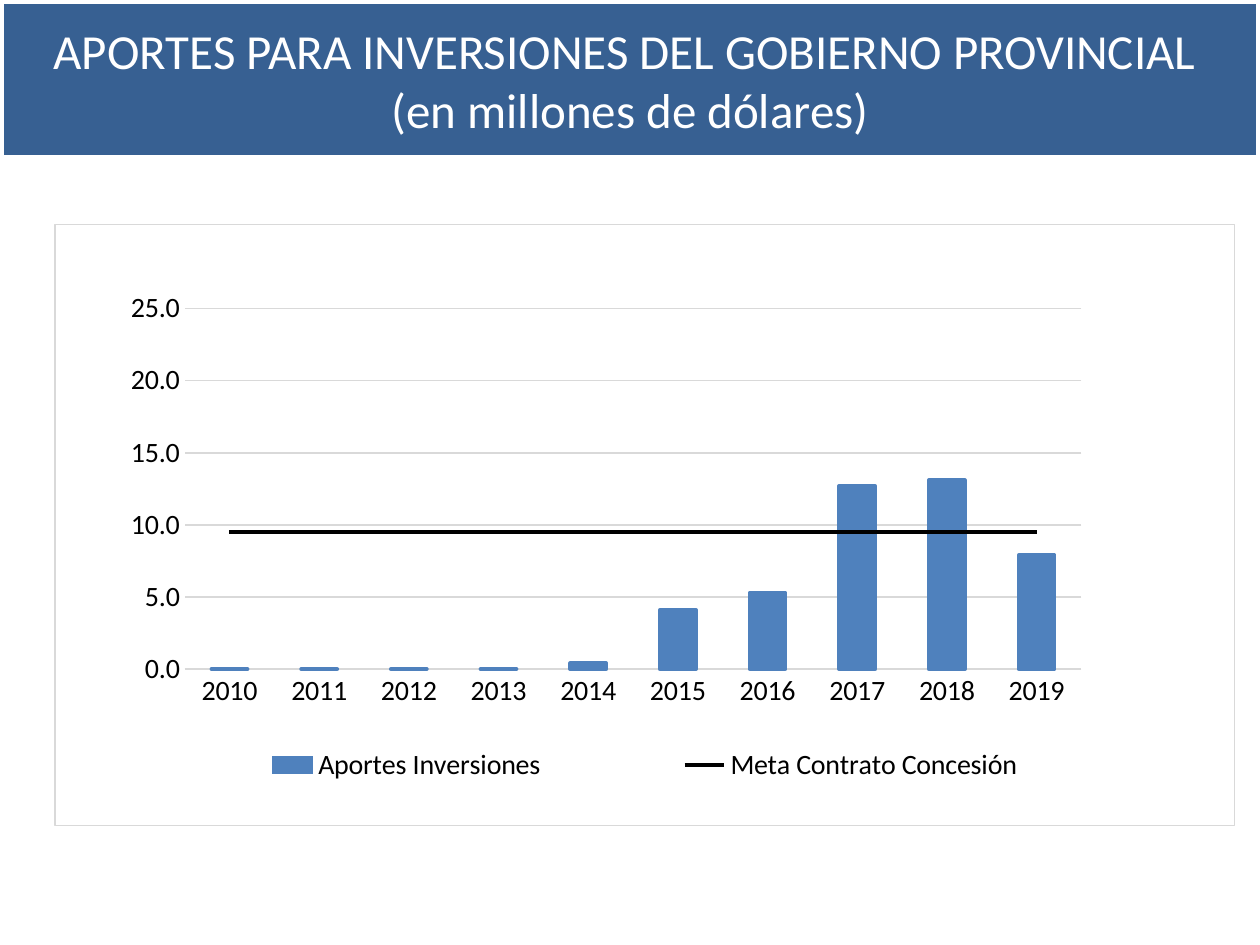
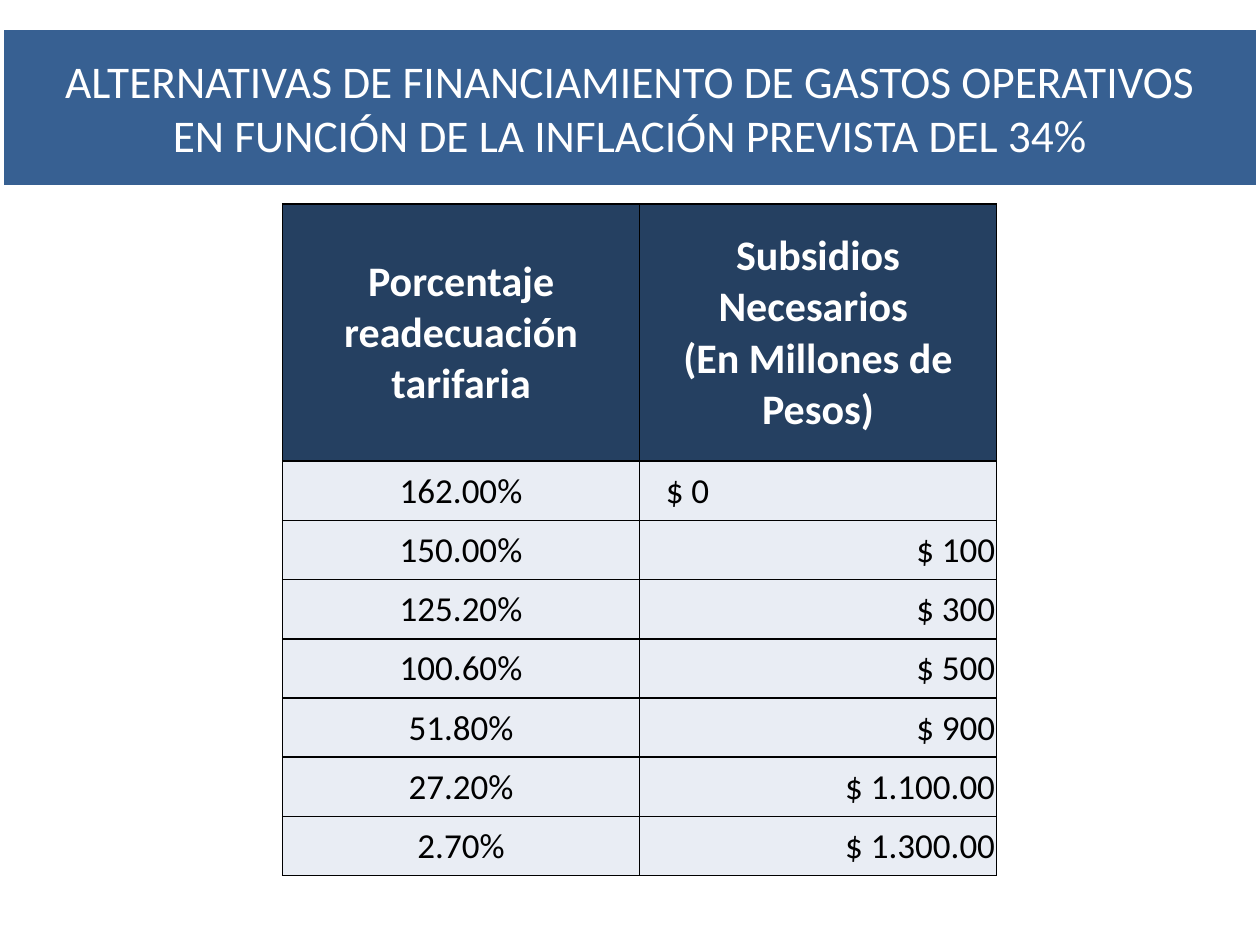
from dataclasses import dataclass
from typing import NamedTuple

from lxml import etree
from pptx import Presentation
from pptx.chart.data import CategoryChartData
from pptx.dml.color import RGBColor
from pptx.enum import chart as charts, text
from pptx.oxml import parse_xml
from pptx.oxml.ns import nsdecls, qn
from pptx.util import Pt


@dataclass(frozen=True)
class Theme:
    font: str = "Calibri"
    band: str = "376092"
    header: str = "254061"
    cell: str = "E9EDF4"
    bar: str = "4F81BD"
    grid: str = "D9D9D9"
    white: str = "FFFFFF"
    black: str = "000000"
    chart_size: float = 16
    header_size: float = 24
    cell_size: float = 20


class Box(NamedTuple):
    left: float
    top: float
    width: float
    height: float

    def lengths(self) -> list:
        return [Pt(value) for value in self]


class Band(NamedTuple):
    """A slide's title band: its lines, type size, top and height."""
    lines: list[str]
    size: float
    top: float
    height: float


class Subsidy(NamedTuple):
    adjustment: str
    amount: str


THEME = Theme()
SLIDE_WIDTH, SLIDE_HEIGHT = 720, 540
TITLE_ONLY = 5

INVESTMENT_BAND = Band(["APORTES PARA INVERSIONES DEL GOBIERNO PROVINCIAL ",
                        "(en millones de dólares)"], 28, 0, 91)
FINANCING_BAND = Band(["ALTERNATIVAS DE FINANCIAMIENTO DE GASTOS OPERATIVOS",
                       "EN FUNCIÓN DE LA INFLACIÓN PREVISTA DEL 34%"], 25.9, 15, 93)

YEARS = [str(year) for year in range(2010, 2020)]
INVESTMENTS = [0, 0, 0, 0, 0.4, 4.1, 5.3, 12.7, 13.1, 7.9]
CONTRACT_GOAL = 9.5
CHART_BOX = Box(31, 128, 675, 344)
PLOT_SHARE = Box(0.11, 0.14, 0.76, 0.6)
LEGEND_SHARE = Box(0.07, 0.86, 0.86, 0.08)

TABLE_BOX = Box(161.5, 116.5, 408, 384)
HEADER_HEIGHT = 147
ZERO_INDENT = 15
HEADERS = [["Porcentaje readecuación tarifaria"],
           ["Subsidios Necesarios ", "(En Millones de Pesos)"]]
SUBSIDIES = [
    Subsidy("162.00%", "$ 0"),
    Subsidy("150.00%", "$ 100"),
    Subsidy("125.20%", "$ 300"),
    Subsidy("100.60%", "$ 500"),
    Subsidy("51.80%", "$ 900"),
    Subsidy("27.20%", "$ 1.100.00"),
    Subsidy("2.70%", "$ 1.300.00"),
]


def color(value: str) -> RGBColor:
    return RGBColor.from_string(value)


def fill_solid(fill, value: str) -> None:
    fill.solid()
    fill.fore_color.rgb = color(value)


def set_line(line, value: str, width: float) -> None:
    line.color.rgb = color(value)
    line.width = Pt(width)


def set_font(font, size: float, value: str, bold: bool = False) -> None:
    font.name, font.size, font.bold = THEME.font, Pt(size), bold
    font.color.rgb = color(value)


def write_lines(frame, lines: list[str], size: float, value: str,
                align=text.PP_ALIGN.CENTER, bold: bool = False) -> None:
    for number, line in enumerate(lines):
        para = frame.paragraphs[0] if number == 0 else frame.add_paragraph()
        para.alignment = align
        span = para.add_run()
        span.text = line
        set_font(span.font, size, value, bold)


def add_page(deck, band: Band):
    """Add a slide whose title placeholder is the full-width band."""
    page = deck.slides.add_slide(deck.slide_layouts[TITLE_ONLY])
    title = page.shapes.title
    title.left, title.top, title.width, title.height = Box(
        0, band.top, SLIDE_WIDTH, band.height).lengths()
    fill_solid(title.fill, THEME.band)
    set_line(title.line, THEME.white, 4.5)
    frame = title.text_frame
    frame.word_wrap = False
    frame.auto_size = text.MSO_AUTO_SIZE.NONE
    frame.vertical_anchor = text.MSO_ANCHOR.MIDDLE
    write_lines(frame, band.lines, band.size, THEME.white)
    return page


def chart_layout(share: Box, inner: bool = False):
    """Layout element that places a chart part by shares of the chart area."""
    target = '<c:layoutTarget val="inner"/>' if inner else ""
    modes = "".join(f'<c:{name}Mode val="edge"/>' for name in "xy")
    sizes = "".join(f'<c:{name} val="{value}"/>' for name, value in zip("xywh", share))
    return parse_xml(f'<c:layout {nsdecls("c")}><c:manualLayout>{target}{modes}{sizes}'
                     '</c:manualLayout></c:layout>')


def place_part(part, layout, after: str | None = None) -> None:
    for old in part.findall(qn("c:layout")):
        part.remove(old)
    if after:
        part.find(qn(after)).addnext(layout)
    else:
        part.insert(0, layout)


def move_last_series_to_line(chart) -> None:
    """Turn the last column series into a line on the same axes."""
    columns = chart.plots[0]._element
    series = columns.findall(qn("c:ser"))[-1]
    for flag in series.findall(qn("c:invertIfNegative")):
        series.remove(flag)
    lines = parse_xml(f'<c:lineChart {nsdecls("c")}><c:grouping val="standard"/>'
                      '<c:varyColors val="0"/><c:marker val="1"/></c:lineChart>')
    lines.insert(2, series)
    for axis in columns.findall(qn("c:axId")):
        etree.SubElement(lines, qn("c:axId")).set("val", axis.get("val"))
    columns.addnext(lines)


def frame_chart(chart) -> None:
    """Give the chart area its white fill and thin border."""
    area = parse_xml(
        f'<c:spPr {nsdecls("c", "a")}><a:solidFill><a:srgbClr val="{THEME.white}"/></a:solidFill>'
        f'<a:ln w="{Pt(0.75)}"><a:solidFill><a:srgbClr val="{THEME.grid}"/></a:solidFill></a:ln>'
        '</c:spPr>')
    chart._chartSpace.find(qn("c:txPr")).addprevious(area)


def style_axes(chart) -> None:
    years, values = chart.category_axis, chart.value_axis
    for axis in (years, values):
        axis.major_tick_mark = axis.minor_tick_mark = charts.XL_TICK_MARK.NONE
    set_line(years.format.line, THEME.grid, 0.75)
    values.minimum_scale, values.maximum_scale, values.major_unit = 0, 25, 5
    values.format.line.fill.background()
    set_line(values.major_gridlines.format.line, THEME.grid, 0.75)
    values.tick_labels.number_format = "#,##0.0"
    values.tick_labels.number_format_is_linked = False


def add_investment_chart(page) -> None:
    data = CategoryChartData()
    data.categories = YEARS
    data.add_series("Aportes Inversiones", INVESTMENTS)
    data.add_series("Meta Contrato Concesión", [CONTRACT_GOAL] * len(YEARS))
    chart = page.shapes.add_chart(charts.XL_CHART_TYPE.COLUMN_STACKED,
                                  *CHART_BOX.lengths(), data).chart
    chart.has_title = False
    set_font(chart.font, THEME.chart_size, THEME.black)
    frame_chart(chart)
    style_axes(chart)

    move_last_series_to_line(chart)
    columns, lines = chart.plots
    columns.gap_width, columns.overlap = 150, 100
    columns.vary_by_categories = False
    bars, goal = columns.series[0], lines.series[0]
    fill_solid(bars.format.fill, THEME.bar)
    set_line(bars.format.line, THEME.bar, 2.25)
    set_line(goal.format.line, THEME.black, 2.25)
    goal.marker.style = charts.XL_MARKER_STYLE.NONE
    goal.smooth = False

    chart.has_legend = True
    chart.legend.position = charts.XL_LEGEND_POSITION.BOTTOM
    chart.legend.include_in_layout = False
    place_part(chart.legend._element, chart_layout(LEGEND_SHARE), "c:legendPos")
    plot_area = columns._element.getparent()
    place_part(plot_area, chart_layout(PLOT_SHARE, inner=True))


def style_cell(cell, fill: str) -> None:
    cell.margin_left = cell.margin_right = cell.margin_top = Pt(0.75)
    cell.margin_bottom = 0
    cell.vertical_anchor = text.MSO_ANCHOR.MIDDLE
    fill_solid(cell.fill, fill)
    for place, side in enumerate("LRTB"):
        cell._tc.get_or_add_tcPr().insert(place, parse_xml(
            f'<a:ln{side} {nsdecls("a")} w="{Pt(1)}"><a:solidFill>'
            f'<a:srgbClr val="{THEME.black}"/></a:solidFill></a:ln{side}>'))


def add_subsidy_table(page) -> None:
    table = page.shapes.add_table(len(SUBSIDIES) + 1, len(HEADERS),
                                  *TABLE_BOX.lengths()).table
    row_height = (TABLE_BOX.height - HEADER_HEIGHT) / len(SUBSIDIES)
    for number, row in enumerate(table.rows):
        row.height = Pt(row_height if number else HEADER_HEIGHT)

    for cell, lines in zip(table.rows[0].cells, HEADERS):
        style_cell(cell, THEME.header)
        write_lines(cell.text_frame, lines, THEME.header_size, THEME.white, bold=True)

    alignments = (text.PP_ALIGN.CENTER, text.PP_ALIGN.RIGHT)
    for number, subsidy in enumerate(SUBSIDIES, start=1):
        for cell, value, align in zip(table.rows[number].cells, subsidy, alignments):
            style_cell(cell, THEME.cell)
            if value == "$ 0":
                align = text.PP_ALIGN.LEFT
                cell.margin_left = Pt(ZERO_INDENT)
            write_lines(cell.text_frame, [value], THEME.cell_size, THEME.black, align)


def main() -> None:
    deck = Presentation()
    deck.slide_width, deck.slide_height = Pt(SLIDE_WIDTH), Pt(SLIDE_HEIGHT)
    add_investment_chart(add_page(deck, INVESTMENT_BAND))
    add_subsidy_table(add_page(deck, FINANCING_BAND))
    deck.save("out.pptx")


if __name__ == "__main__":
    main()
